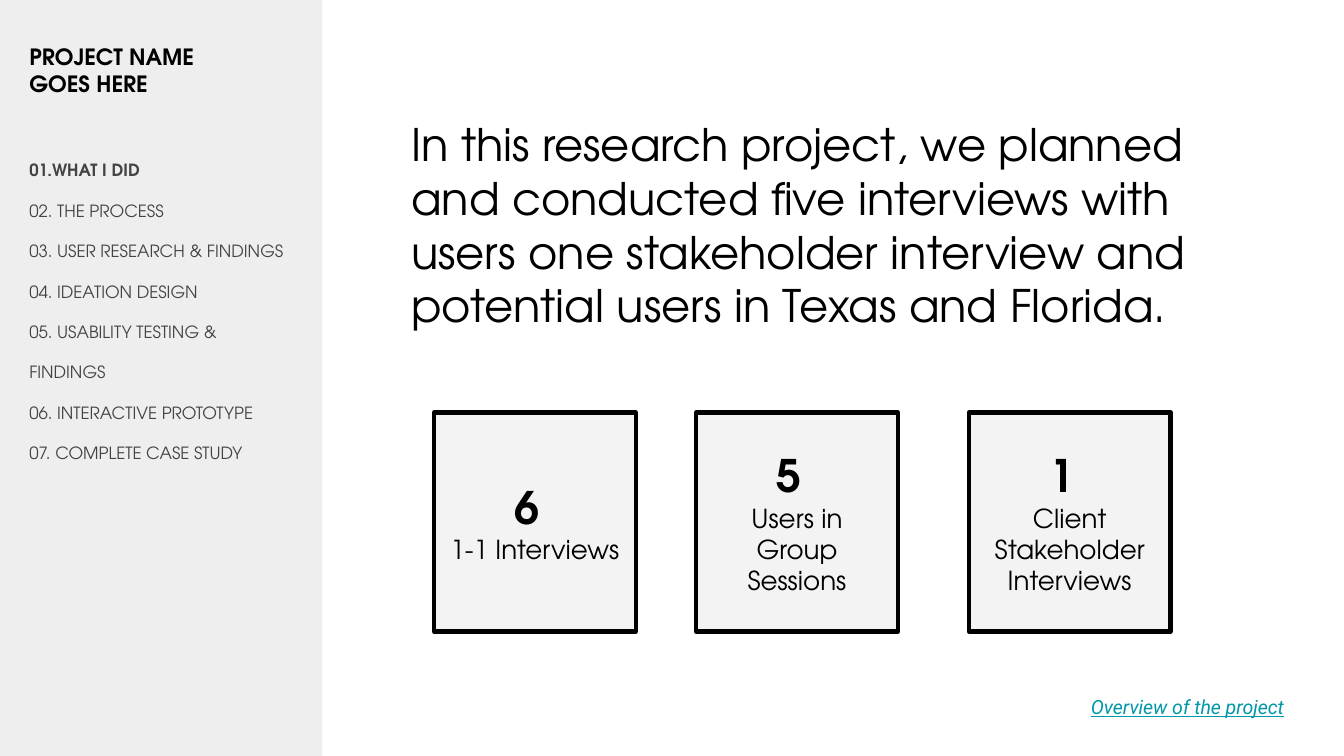
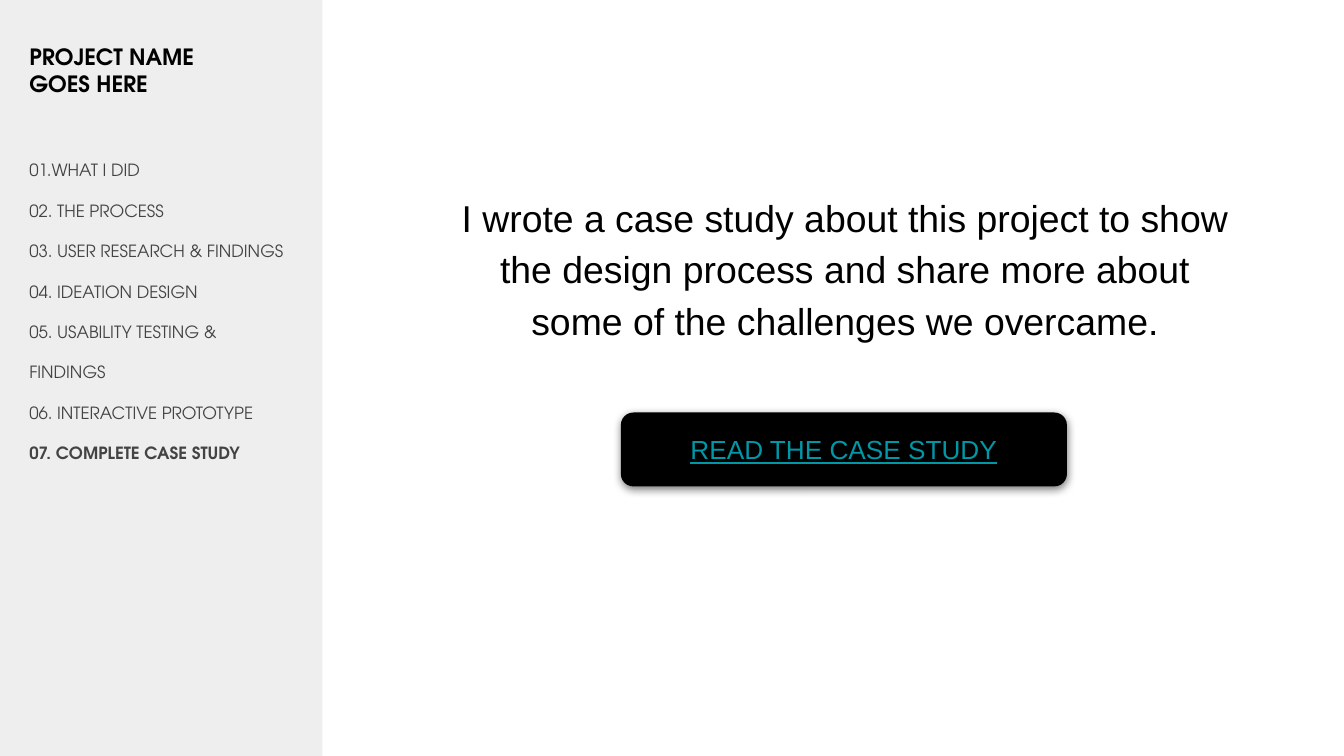
from typing import NamedTuple

import pptx
import pptx.dml.color
import pptx.enum.shapes
import pptx.enum.text
import pptx.oxml
import pptx.oxml.ns
import pptx.util

Pt = pptx.util.Pt
RGBColor = pptx.dml.color.RGBColor
SHAPE = pptx.enum.shapes.MSO_SHAPE
ALIGN = pptx.enum.text.PP_ALIGN
ANCHOR = pptx.enum.text.MSO_ANCHOR

BLACK = RGBColor(0x00, 0x00, 0x00)
GREY = RGBColor(0x43, 0x43, 0x43)
SIDEBAR = RGBColor(0xEE, 0xEE, 0xEE)
CARD_FILL = RGBColor(0xF3, 0xF3, 0xF3)
TEAL = RGBColor(0x00, 0x97, 0xA7)

DISPLAY = "TeX Gyre Adventor"
SANS = "Arial"
LINK = "Roboto"

SLIDE_W, SLIDE_H = 720, 405
INSET = 7.2
SECTIONS = [
    "01.WHAT I DID",
    "02. THE PROCESS",
    "03. USER RESEARCH & FINDINGS",
    "04. IDEATION DESIGN",
    "05. USABILITY TESTING & FINDINGS",
    "06. INTERACTIVE PROTOTYPE",
    "07. COMPLETE CASE STUDY",
]


class Box(NamedTuple):
    """Left, top, width and height in points."""
    left: float
    top: float
    width: float
    height: float

    def lengths(self) -> list:
        return [Pt(v) for v in self]


class Card(NamedTuple):
    left: float
    count: str
    label: str


CARDS = [
    Card(232.6, "6", "1-1 Interviews"),
    Card(373, "5", "Users in Group Sessions"),
    Card(519.1, "1", "Client Stakeholder Interviews"),
]
CARD_TOP, CARD_W, CARD_H = 221, 108, 117.4


def write(tf, text: str, *, size: float, font: str = DISPLAY,
          color: RGBColor = BLACK, bold: bool = False, italic: bool = False,
          underline: bool = False, align=ALIGN.LEFT, spacing: float = 1.0,
          indent: float = 0) -> None:
    """Add one paragraph, using the empty first one if there is one."""
    p = tf.paragraphs[0]
    if p.runs:
        p = tf.add_paragraph()
    p.alignment = align
    p.line_spacing = spacing
    if indent:
        p._p.get_or_add_pPr().set("indent", str(Pt(indent)))
    r = p.add_run()
    r.text = text
    f = r.font
    f.name, f.size, f.color.rgb = font, Pt(size), color
    f.bold, f.italic, f.underline = bold, italic, underline


def prepare(tf, anchor=ANCHOR.TOP):
    """Set wrapping, insets and anchor of a text frame."""
    tf.word_wrap = True
    tf.auto_size = pptx.enum.text.MSO_AUTO_SIZE.NONE
    tf.vertical_anchor = anchor
    tf.margin_left = tf.margin_right = Pt(INSET)
    tf.margin_top = tf.margin_bottom = Pt(INSET)
    return tf


def add_text(s, box: Box):
    return prepare(s.shapes.add_textbox(*box.lengths()).text_frame)


def add_panel(s, box: Box, fill: RGBColor, kind=SHAPE.RECTANGLE,
              outline: float = 0):
    sp = s.shapes.add_shape(kind, *box.lengths())
    sp.shadow.inherit = False
    sp.fill.solid()
    sp.fill.fore_color.rgb = fill
    if outline:
        sp.line.color.rgb = BLACK
        sp.line.width = Pt(outline)
    else:
        sp.line.fill.background()
    prepare(sp.text_frame, ANCHOR.MIDDLE)
    return sp


def add_shadow(sp) -> None:
    effects = sp._element.spPr.find(pptx.oxml.ns.qn("a:effectLst"))
    effects.append(pptx.oxml.parse_xml(
        f'<a:outerShdw {pptx.oxml.ns.nsdecls("a")} blurRad="{Pt(4.5)}" '
        f'dist="{Pt(1.5)}" dir="5400000" algn="bl" rotWithShape="0">'
        '<a:srgbClr val="000000"><a:alpha val="50000"/></a:srgbClr>'
        '</a:outerShdw>'))


def add_base_slide(prs, current: int, headline: str, box: Box, **fmt):
    """Add a slide with its headline and the sidebar, current section bold."""
    s = prs.slides.add_slide(prs.slide_layouts.get_by_name("Title Only"))
    title = s.shapes.title
    title.left, title.top, title.width, title.height = box.lengths()
    write(prepare(title.text_frame), headline, **fmt)

    add_panel(s, Box(0, 0, 172.8, SLIDE_H), SIDEBAR)
    tf = add_text(s, Box(8.6, 15.8, 150.5, 39.6))
    for line in ("PROJECT NAME", "GOES HERE"):
        write(tf, line, size=12, bold=True)
    tf = add_text(s, Box(8.6, 67.7, 157.7, 236.9))
    for number, section in enumerate(SECTIONS, 1):
        write(tf, section, size=9, color=GREY, spacing=2.0,
              bold=number == current)
    return s


def build_what_i_did(prs) -> None:
    s = add_base_slide(
        prs, 1,
        "In this research project, we planned and conducted five interviews "
        "with users one stakeholder interview and potential users in Texas "
        "and Florida.",
        Box(213.1, 55.4, 467.3, 125.3), size=24)
    for card in CARDS:
        box = Box(card.left, CARD_TOP, CARD_W, CARD_H)
        tf = add_panel(s, box, CARD_FILL, outline=2.25).text_frame
        write(tf, card.count, size=24, bold=True, indent=36)
        write(tf, card.label, size=14, align=ALIGN.CENTER)
    write(add_text(s, Box(577.4, 365, 129.6, 31.7)), "Overview of the project",
          size=10.5, font=LINK, color=TEAL, italic=True, underline=True)


def build_case_study(prs) -> None:
    s = add_base_slide(
        prs, len(SECTIONS),
        "I wrote a case study about this project to show the design process "
        "and share more about some of the challenges we overcame.",
        Box(239, 93.6, 427.7, 108.7), size=20, font=SANS,
        align=ALIGN.CENTER, spacing=1.15)
    button = add_panel(s, Box(332.6, 221, 239, 39.6), BLACK,
                       SHAPE.ROUNDED_RECTANGLE)
    button.adjustments[0] = 0.17
    add_shadow(button)
    write(button.text_frame, "READ THE CASE STUDY", size=14, font=SANS,
          color=TEAL, underline=True, align=ALIGN.CENTER)


def main() -> None:
    prs = pptx.Presentation()
    prs.slide_width, prs.slide_height = Pt(SLIDE_W), Pt(SLIDE_H)
    build_what_i_did(prs)
    build_case_study(prs)
    prs.save("out.pptx")


if __name__ == "__main__":
    main()
